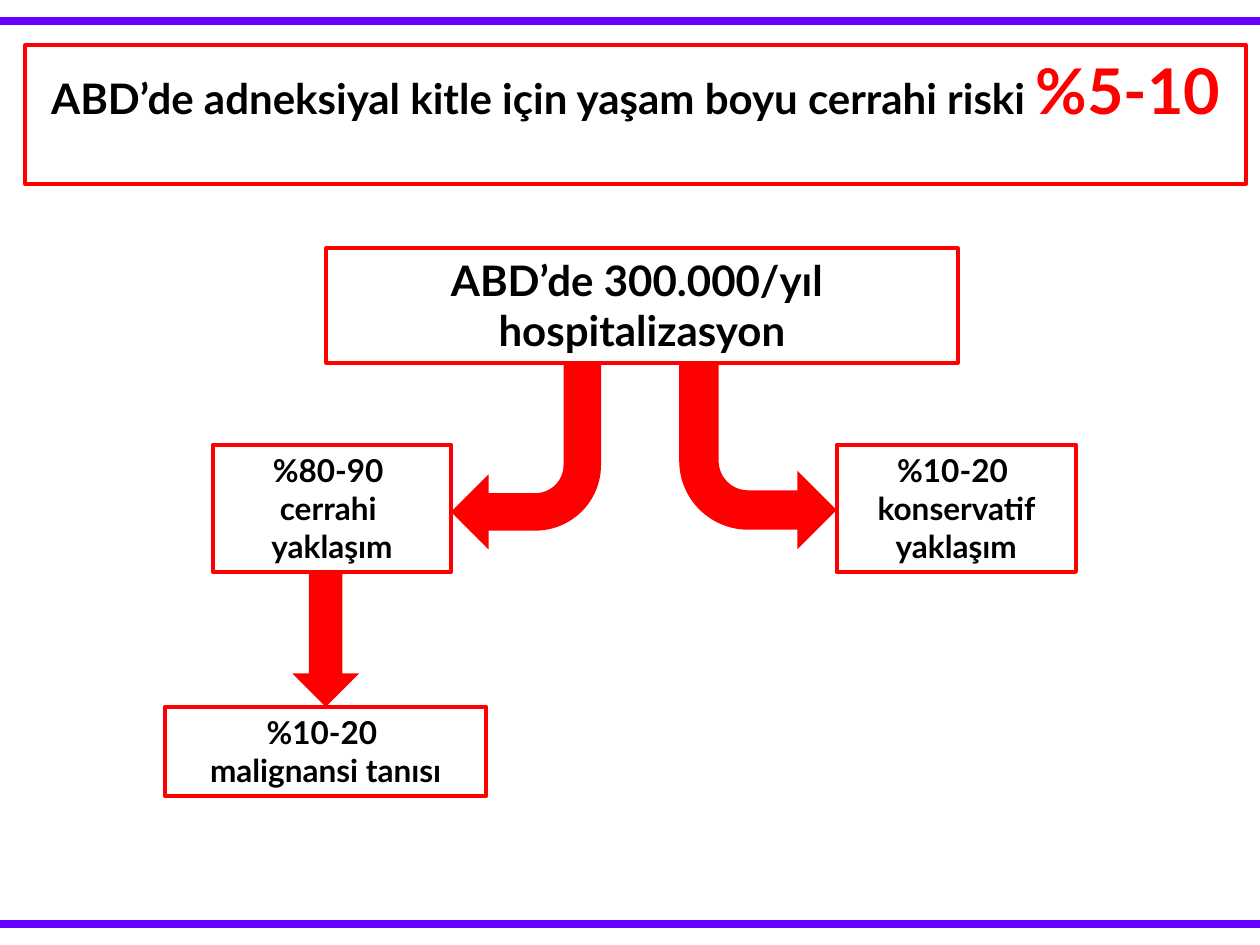
import collections

import lxml.etree
import pptx
import pptx.dml.color
import pptx.enum.shapes
import pptx.enum.text
import pptx.oxml.ns
import pptx.util

SHAPE = pptx.enum.shapes.MSO_SHAPE
FIT = pptx.enum.text.MSO_AUTO_SIZE
WIDTH, HEIGHT = 10, 7.5
COLUMNS, ROWS = 100, 75

Theme = collections.namedtuple(
    "Theme", "font text accent rule small medium large frame_line rule_line")
THEME = Theme("Lato", "000000", "FF0000", "6600FF", 18, 24, 36, 2.25, 4.5)


class Box(collections.namedtuple("Box", "left top width height")):
    """A rectangle in grid columns and rows."""

    @property
    def right(self):
        return self.left + self.width

    @property
    def bottom(self):
        return self.top + self.height

    @property
    def middle(self):
        return self.left + self.width / 2

    def inner(self, left, top, width, height):
        return Box(self.left + left, self.top + top, width, height)


def across(columns):
    return pptx.util.Inches(columns * WIDTH / COLUMNS)


def down(rows):
    return pptx.util.Inches(rows * HEIGHT / ROWS)


def color(code):
    return pptx.dml.color.RGBColor.from_string(code)


def add_text(para, text, size=THEME.small, code=THEME.text):
    span = para.add_run()
    span.text = text
    span.font.name = THEME.font
    span.font.size = pptx.util.Pt(size)
    span.font.bold = True
    span.font.color.rgb = color(code)


def add_preset(page, kind, box):
    shape = page.shapes.add_shape(
        kind, across(box.left), down(box.top), across(box.width), down(box.height))
    shape.shadow.inherit = False
    return shape


def add_frame(page, box, lines, fit=FIT.SHAPE_TO_FIT_TEXT):
    """Outlined box; each line is a list of (text, format) spans."""
    shape = add_preset(page, SHAPE.RECTANGLE, box)
    shape.fill.background()
    shape.line.color.rgb = color(THEME.accent)
    shape.line.width = pptx.util.Pt(THEME.frame_line)
    frame = shape.text_frame
    frame.word_wrap = True
    frame.auto_size = fit
    frame.vertical_anchor = pptx.enum.text.MSO_ANCHOR.TOP
    for index, spans in enumerate(lines):
        para = frame.add_paragraph() if index else frame.paragraphs[0]
        para.alignment = pptx.enum.text.PP_ALIGN.CENTER
        for text, style in spans:
            add_text(para, text, **style)


def add_node(page, box, lines, **style):
    add_frame(page, box, [[(line, style)] for line in lines])


def add_arrow(page, kind, box, rotation=0, mirrored=False):
    shape = add_preset(page, kind, box)
    shape.fill.solid()
    shape.fill.fore_color.rgb = color(THEME.accent)
    shape.line.fill.background()
    shape.rotation = rotation
    if mirrored:
        shape.element.spPr.xfrm.set("flipH", "1")


def draw_rules(page, box):
    for row in (box.top, box.bottom):
        line = page.shapes.add_connector(
            pptx.enum.shapes.MSO_CONNECTOR.STRAIGHT,
            across(box.left), down(row), across(box.right), down(row))
        line.line.color.rgb = color(THEME.rule)
        line.line.width = pptx.util.Pt(THEME.rule_line)
        lxml.etree.SubElement(line.element.spPr, pptx.oxml.ns.qn("a:effectLst"))


def draw_title(page, box):
    add_frame(page, box, [[
        ("ABD’de adneksiyal kitle için yaşam boyu cerrahi riski ",
         {"size": THEME.medium}),
        ("%5-10", {"size": THEME.large, "code": THEME.accent}),
    ]], fit=FIT.NONE)


def draw_flow(page, box):
    source = box.inner(12.8, 0, 50.1, 9.1)
    surgery = box.inner(3.8, 15.6, 18.9, 10.1)
    conservative = box.inner(53.3, 15.6, 19, 10.1)
    diagnosis = box.inner(0, 36.4, 25.5, 7.1)

    # Branches leaving the source, and the step down to the diagnosis
    drop, left_reach, right_reach, step_width = 14.8, 11.9, 12.5, 5.3
    add_arrow(page, SHAPE.BENT_ARROW,
              Box(surgery.right, source.bottom, left_reach, drop), rotation=180)
    add_arrow(page, SHAPE.BENT_ARROW,
              Box(conservative.left - right_reach, source.bottom, right_reach, drop),
              rotation=180, mirrored=True)
    add_arrow(page, SHAPE.DOWN_ARROW,
              Box(diagnosis.middle - step_width / 2, surgery.bottom,
                  step_width, diagnosis.top - surgery.bottom))

    # Text boxes
    add_node(page, source, ["ABD’de 300.000/yıl ", "hospitalizasyon"],
             size=THEME.medium)
    add_node(page, surgery, ["%80-90 ", "cerrahi ", "yaklaşım"])
    add_node(page, conservative, ["%10-20 ", "konservatif yaklaşım"])
    add_node(page, diagnosis, ["%10-20 ", "malignansi tanısı"])


def main():
    deck = pptx.Presentation()
    deck.slide_width = pptx.util.Inches(WIDTH)
    deck.slide_height = pptx.util.Inches(HEIGHT)
    page = deck.slides.add_slide(deck.slide_layouts[6])
    draw_rules(page, Box(0, 1.7, COLUMNS, ROWS - 2 * 1.7))
    draw_title(page, Box(2, 3.6, 96.9, 11))
    draw_flow(page, Box(13.1, 19.7, 72.3, 43.5))
    deck.save("out.pptx")


if __name__ == "__main__":
    main()
